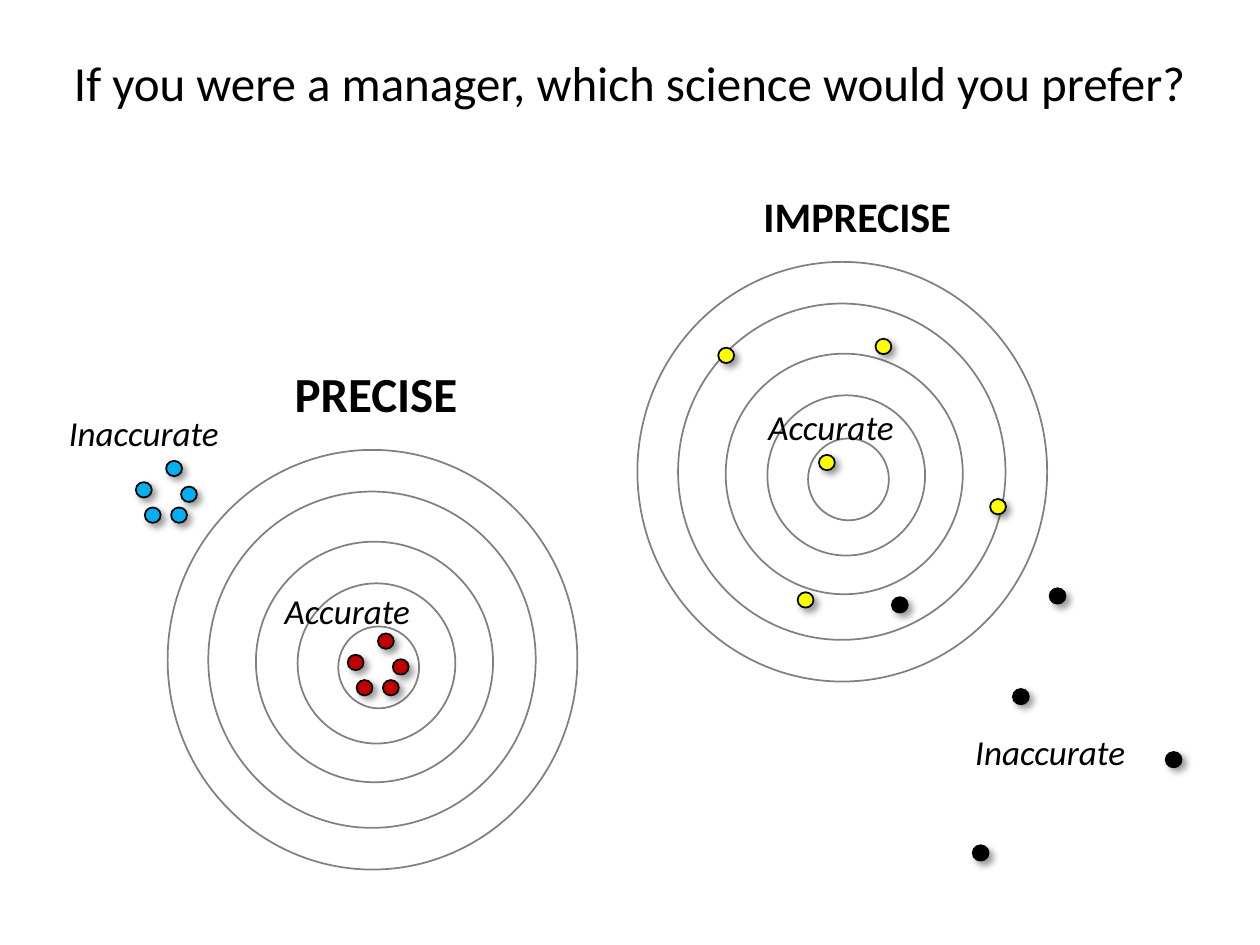
"""Build a slide that contrasts precise and imprecise science with shots on targets."""
from typing import NamedTuple

from lxml.etree import SubElement
from pptx import Presentation
from pptx.dml.color import RGBColor
from pptx.enum.shapes import MSO_SHAPE
from pptx.enum.text import MSO_ANCHOR, MSO_AUTO_SIZE, PP_ALIGN
from pptx.oxml.ns import qn
from pptx.util import Cm, Pt


class Box(NamedTuple):
    left: float
    top: float
    width: float
    height: float

    def lengths(self) -> tuple:
        return tuple(Cm(value) for value in self)


class Label(NamedTuple):
    text: str
    box: Box
    size: int
    bold: bool = False
    italic: bool = False


class Volley(NamedTuple):
    color: str
    hits: list


RINGS = [
    Box(0, 0, 8.26, 8.46),
    Box(0.82, 0.84, 6.6, 6.78),
    Box(1.78, 1.85, 4.78, 4.85),
    Box(2.62, 2.69, 3.18, 3.23),
    Box(3.44, 3.56, 1.63, 1.65),
]
TARGETS = [(12.85, 5.28), (3.38, 9.07)]
CLUSTER = [(0, 0), (0.18, 0.51), (0.71, 0.51), (0.91, 0.09), (0.61, -0.43)]
HIT_WIDTH, HIT_HEIGHT = 0.32, 0.31


def cluster_at(left: float, top: float) -> list:
    return [(left + dx, top + dy) for dx, dy in CLUSTER]


VOLLEYS = [
    Volley("C00000", cluster_at(7.01, 13.2)),
    Volley("00B0F0", cluster_at(2.74, 9.72)),
    Volley("000000", [(17.98, 12.04), (20.42, 13.89), (23.5, 15.16),
                      (19.61, 17.04), (21.16, 11.86)]),
    Volley("FFFF00", [(14.48, 7.01), (16.51, 9.17), (19.96, 10.06),
                      (16.08, 11.94), (17.65, 6.83)]),
]
LABELS = [
    Label("PRECISE", Box(5.69, 7.21, 3.84, 1.45), 28, bold=True),
    Label("IMPRECISE", Box(15.14, 3.71, 4.34, 1.27), 24, bold=True),
    Label("Inaccurate", Box(19.41, 14.6, 3.56, 1.12), 20, italic=True),
    Label("Accurate", Box(15.24, 8.05, 3.07, 1.12), 20, italic=True),
    Label("Accurate", Box(5.49, 11.76, 3.07, 1.12), 20, italic=True),
    Label("Inaccurate", Box(1.14, 8.18, 3.56, 1.12), 20, italic=True),
]


def paint(color_format, color: str) -> None:
    color_format.rgb = RGBColor.from_string(color)


def write(frame, text: str, *, size: int, bold: bool = False, italic: bool = False,
          align=PP_ALIGN.LEFT, wrap: bool = False) -> None:
    frame.word_wrap = wrap
    frame.auto_size = MSO_AUTO_SIZE.SHAPE_TO_FIT_TEXT
    frame.vertical_anchor = MSO_ANCHOR.TOP
    paragraph = frame.paragraphs[0]
    paragraph.alignment = align
    run = paragraph.add_run()
    run.text = text
    run.font.name = "Calibri"
    run.font.size = Pt(size)
    run.font.bold = bold
    run.font.italic = italic
    paint(run.font.color, "000000")


def add_circle(shapes, box: Box, fill: str, line: str):
    circle = shapes.add_shape(MSO_SHAPE.OVAL, *box.lengths())
    circle.shadow.inherit = False
    circle.fill.solid()
    paint(circle.fill.fore_color, fill)
    paint(circle.line.color, line)
    circle.line.width = Pt(1)
    return circle


def add_target(slide, left: float, top: float) -> None:
    rings = slide.shapes.add_group_shape().shapes
    for ring in RINGS:
        box = ring._replace(left=left + ring.left, top=top + ring.top)
        add_circle(rings, box, "FFFFFF", "808080")


def cast_shadow(shape) -> None:
    effects = shape._element.spPr.find(qn("a:effectLst"))
    shadow = SubElement(effects, qn("a:outerShdw"), blurRad=str(Pt(4)), dist=str(Pt(3)),
                        dir=str(45 * 60000), algn="tl", rotWithShape="0")
    color = SubElement(shadow, qn("a:srgbClr"), val="000000")
    SubElement(color, qn("a:alpha"), val="40000")


def add_volley(slide, volley: Volley) -> None:
    for left, top in volley.hits:
        box = Box(left, top, HIT_WIDTH, HIT_HEIGHT)
        cast_shadow(add_circle(slide.shapes, box, volley.color, "000000"))


def add_label(slide, label: Label) -> None:
    frame = slide.shapes.add_textbox(*label.box.lengths()).text_frame
    write(frame, label.text, size=label.size, bold=label.bold, italic=label.italic)


def main() -> None:
    presentation = Presentation()
    presentation.slide_width, presentation.slide_height = Cm(25.4), Cm(19.05)
    slide = presentation.slides.add_slide(presentation.slide_layouts[5])

    title = slide.shapes.title
    title.left, title.top, title.width, title.height = Box(0.18, 0.94, 25.02, 1.45).lengths()
    write(title.text_frame, "If you were a manager, which science would you prefer?",
          size=28, align=PP_ALIGN.CENTER, wrap=True)

    for left, top in TARGETS:
        add_target(slide, left, top)
    for volley in VOLLEYS:
        add_volley(slide, volley)
    for label in LABELS:
        add_label(slide, label)

    presentation.save("out.pptx")


if __name__ == "__main__":
    main()
